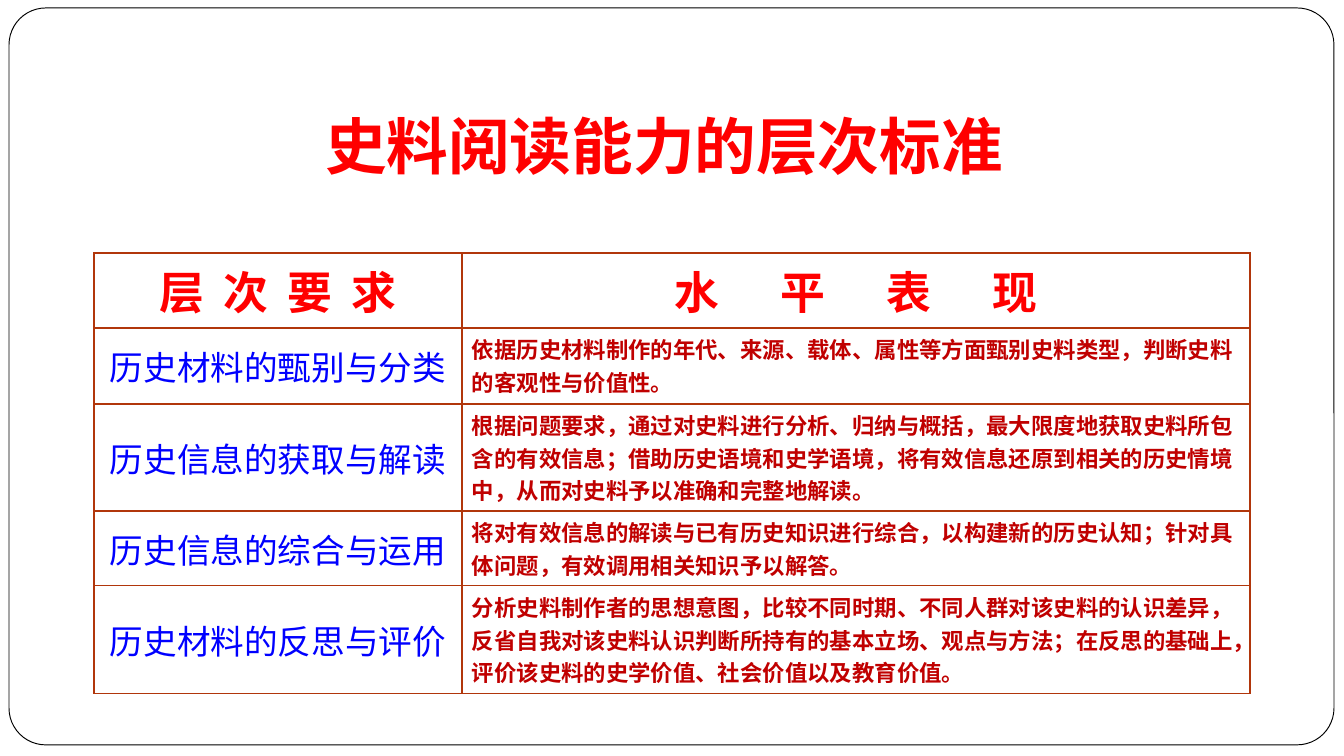
from lxml import etree
from pptx import Presentation
from pptx import util as u
from pptx.dml.color import RGBColor
from pptx.enum import shapes, text
from pptx.oxml.ns import qn

EMU_PER_PX = 914400 / 134.4
WHITE = RGBColor(0xFF, 0xFF, 0xFF)
BLACK = RGBColor(0, 0, 0)
RED = RGBColor(0xFF, 0, 0)
BLUE = RGBColor(0, 0, 0xFF)
DARK_RED = RGBColor(0xC0, 0, 0)
BORDER = RGBColor(0xB1, 0x36, 0x0B)
SANS_SC = "Noto Sans CJK SC"
SANS_JP = "Noto Sans CJK JP"

TITLE = "史料阅读能力的层次标准"
HEADERS = [("层次要求", 10.4), ("水平表现", 32.8)]  # text, letter spacing in points
LEVELS = [
    ("历史材料的甄别与分类",
     "依据历史材料制作的年代、来源、载体、属性等方面甄别史料类型，判断史料的客观性与价值性。"),
    ("历史信息的获取与解读",
     "根据问题要求，通过对史料进行分析、归纳与概括，最大限度地获取史料所包含的有效信息；"
     "借助历史语境和史学语境，将有效信息还原到相关的历史情境中，从而对史料予以准确和完整地解读。"),
    ("历史信息的综合与运用",
     "将对有效信息的解读与已有历史知识进行综合，以构建新的历史认知；"
     "针对具体问题，有效调用相关知识予以解答。"),
    ("历史材料的反思与评价",
     "分析史料制作者的思想意图，比较不同时期、不同人群对该史料的认识差异，"
     "反省自我对该史料认识判断所持有的基本立场、观点与方法；"
     "在反思的基础上，评价该史料的史学价值、社会价值以及教育价值。"),
]
COLUMN_WIDTHS = [368, 788]
ROW_HEIGHTS = [75, 76, 107, 75, 108]


def px(length):
    return u.Emu(round(length * EMU_PER_PX))


def box(left, top, width, height):
    return [px(length) for length in (left, top, width, height)]


def format_runs(paragraph, size, color, bold, font=SANS_SC):
    """Style every run, naming the font for Latin and East Asian text."""
    for run in paragraph.runs:
        run.font.size = u.Pt(size)
        run.font.bold = bold
        run.font.color.rgb = color
        run.font.name = font
        east_asian = etree.SubElement(run._r.get_or_add_rPr(), qn("a:ea"))
        east_asian.set("typeface", font)


def add_frame(slide):
    frame = slide.shapes.add_shape(shapes.MSO_SHAPE.ROUNDED_RECTANGLE, *box(9, 8, 1325, 737))
    frame.adjustments[0] = 0.05
    frame.shadow.inherit = False
    frame.fill.solid()
    frame.fill.fore_color.rgb = WHITE
    frame.line.color.rgb = BLACK
    frame.line.width = u.Pt(0.5)


def add_title(slide):
    text_frame = slide.shapes.add_textbox(*box(140, 108, 1048, 77)).text_frame
    text_frame.word_wrap = True
    text_frame.margin_left = text_frame.margin_right = 0
    text_frame.margin_top = text_frame.margin_bottom = 0
    text_frame.text = TITLE
    paragraph = text_frame.paragraphs[0]
    paragraph.alignment = text.PP_ALIGN.CENTER
    format_runs(paragraph, 33, RED, True)


def style_cell(cell):
    """Set white fill, narrow margins and thin borders on all four sides."""
    cell.margin_left = cell.margin_right = px(10)
    cell.margin_top = cell.margin_bottom = px(5)
    properties = cell._tc.get_or_add_tcPr()
    for side in ("a:lnL", "a:lnR", "a:lnT", "a:lnB"):
        line = etree.SubElement(properties, qn(side), w=str(u.Pt(0.75)))
        fill = etree.SubElement(line, qn("a:solidFill"))
        etree.SubElement(fill, qn("a:srgbClr"), val=str(BORDER))
    cell.fill.solid()
    cell.fill.fore_color.rgb = WHITE


def fill_header(cell, label, spacing):
    """Spread the letters; the last one has no spacing, so the label stays centred."""
    paragraph = cell.text_frame.paragraphs[0]
    paragraph.alignment = text.PP_ALIGN.CENTER
    spread = paragraph.add_run()
    spread.text = label[:-1]
    spread._r.get_or_add_rPr().set("spc", str(round(spacing * 100)))
    paragraph.add_run().text = label[-1]
    format_runs(paragraph, 24, RED, True, SANS_JP)


def fill_level(cell, label):
    cell.vertical_anchor = text.MSO_ANCHOR.MIDDLE
    cell.text_frame.text = label
    paragraph = cell.text_frame.paragraphs[0]
    paragraph.alignment = text.PP_ALIGN.CENTER
    format_runs(paragraph, 18, BLUE, False)


def fill_description(cell, description):
    cell.text_frame.text = description
    format_runs(cell.text_frame.paragraphs[0], 12, DARK_RED, True)


def add_level_table(slide):
    size = box(94, 253, sum(COLUMN_WIDTHS), sum(ROW_HEIGHTS))
    table = slide.shapes.add_table(len(ROW_HEIGHTS), len(COLUMN_WIDTHS), *size).table
    for column, width in zip(table.columns, COLUMN_WIDTHS):
        column.width = px(width)
    for row, height in zip(table.rows, ROW_HEIGHTS):
        row.height = px(height)
    for cell in table.iter_cells():
        style_cell(cell)
    for column, (label, spacing) in enumerate(HEADERS):
        fill_header(table.cell(0, column), label, spacing)
    for row, (label, description) in enumerate(LEVELS, start=1):
        fill_level(table.cell(row, 0), label)
        fill_description(table.cell(row, 1), description)


def main():
    presentation = Presentation()
    presentation.slide_width = px(1344)
    presentation.slide_height = px(756)
    slide = presentation.slides.add_slide(presentation.slide_layouts[6])
    add_frame(slide)
    add_title(slide)
    add_level_table(slide)
    presentation.save("out.pptx")


if __name__ == "__main__":
    main()
